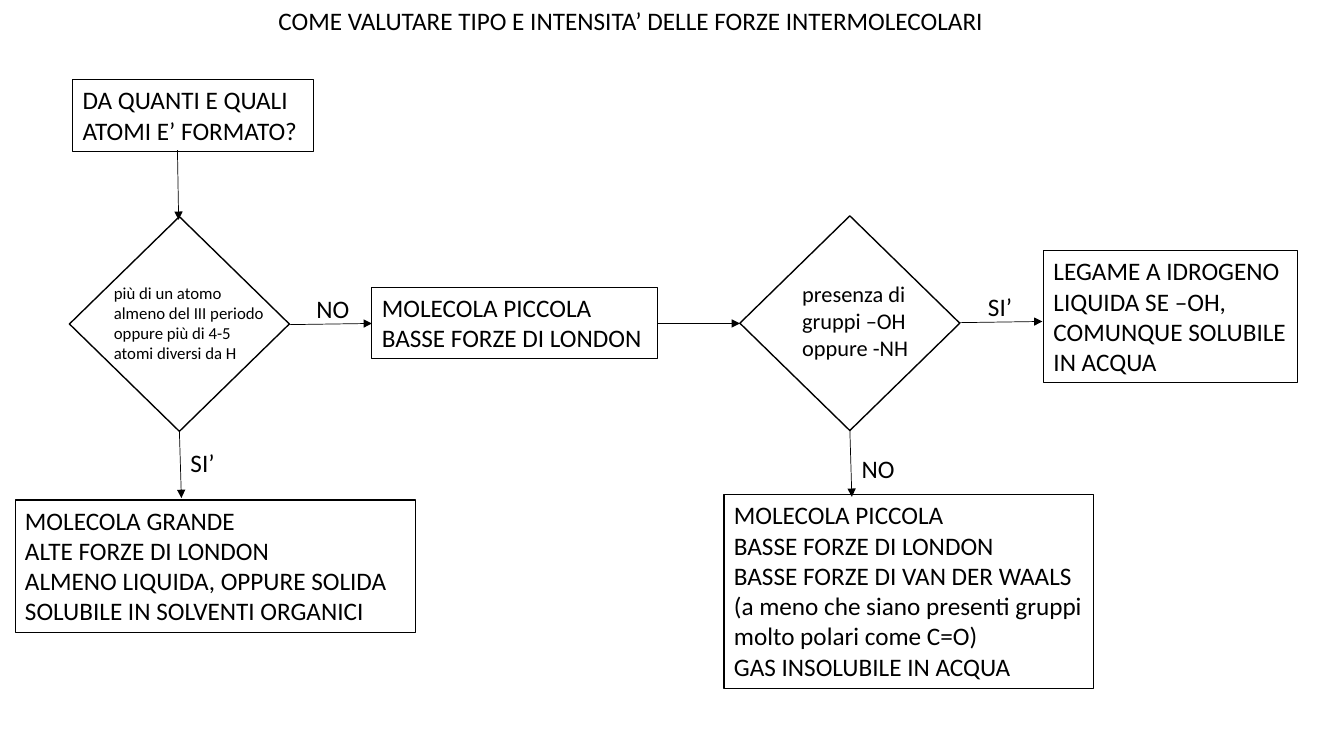
from lxml import etree
from pptx import Presentation
from pptx.dml.color import RGBColor
from pptx.enum.shapes import MSO_CONNECTOR, MSO_SHAPE
from pptx.enum.text import MSO_ANCHOR, MSO_AUTO_SIZE, PP_ALIGN
from pptx.oxml.ns import qn
from pptx.util import Cm, Inches, Pt

COLORS = {"ink": "000000", "paper": "FFFFFF"}
DIAMOND_W, DIAMOND_H = 5.54, 5.41
LABEL_H = 1.02


def rgb(name):
    return RGBColor.from_string(COLORS[name])


class FlowSlide:
    font = "Calibri"

    def __init__(self, prs):
        self.s = prs.slides.add_slide(prs.slide_layouts[5])

    def place(self, sp, x, y, w, h):
        sp.left, sp.top, sp.width, sp.height = Cm(x), Cm(y), Cm(w), Cm(h)

    def set_text(self, sp, lines, size=18):
        tf = sp.text_frame
        tf.word_wrap = True
        tf.auto_size = MSO_AUTO_SIZE.SHAPE_TO_FIT_TEXT
        tf.vertical_anchor = MSO_ANCHOR.TOP
        tf.text = "\n".join(lines)
        for p in tf.paragraphs:
            p.alignment = PP_ALIGN.LEFT
            p.line_spacing = 1.0
            p.space_before = Pt(0)
            p.font.name = self.font
            p.font.size = Pt(size)
            p.font.color.rgb = rgb("ink")

    def outline(self, sp, width):
        sp.shadow.inherit = False
        sp.line.color.rgb = rgb("ink")
        sp.line.width = Pt(width)

    def title(self, text, x, y, w, h):
        sp = self.s.shapes.title
        self.place(sp, x, y, w, h)
        self.set_text(sp, [text])

    def text(self, lines, x, y, w, h=LABEL_H, size=18, shapes=None):
        shapes = shapes or self.s.shapes
        sp = shapes.add_textbox(Cm(x), Cm(y), Cm(w), Cm(h))
        self.set_text(sp, lines, size)

    def box(self, lines, x, y, w, h):
        sp = self.s.shapes.add_shape(MSO_SHAPE.RECTANGLE, Cm(x), Cm(y), Cm(w), Cm(h))
        sp.fill.background()
        self.outline(sp, 0.75)
        self.set_text(sp, lines)

    def decision(self, lines, x, y, text_x, text_y, size):
        shapes = self.s.shapes.add_group_shape().shapes
        sp = shapes.add_shape(MSO_SHAPE.DIAMOND, Cm(x), Cm(y), Cm(DIAMOND_W), Cm(DIAMOND_H))
        sp.fill.solid()
        sp.fill.fore_color.rgb = rgb("paper")
        self.outline(sp, 1)
        self.text(lines, text_x, text_y, 4.39, 2.31, size, shapes)

    def arrow(self, x1, y1, x2, y2):
        c = self.s.shapes.add_connector(MSO_CONNECTOR.STRAIGHT, Cm(x1), Cm(y1), Cm(x2), Cm(y2))
        c.line.color.rgb = rgb("ink")
        c.line.width = Pt(0.5)
        spPr = c._element.spPr
        etree.SubElement(spPr.find(qn("a:ln")), qn("a:tailEnd"), type="triangle")
        etree.SubElement(spPr, qn("a:effectLst"))


def main():
    prs = Presentation()
    prs.slide_width, prs.slide_height = Inches(13.33), Inches(7.5)
    flow = FlowSlide(prs)

    flow.title("COME VALUTARE TIPO E INTENSITA’ DELLE FORZE INTERMOLECOLARI", 6.76, 0, 18.42, LABEL_H)

    flow.box(["DA QUANTI E QUALI ATOMI E’ FORMATO?"], 1.83, 2.01, 6.07, 1.8)
    flow.decision(
        ["più di un atomo almeno del III periodo", "oppure più di 4-5 atomi diversi da H"],
        1.75, 5.46, 2.62, 6.99, 12)
    flow.box(
        ["MOLECOLA GRANDE", "ALTE FORZE DI LONDON",
         "ALMENO LIQUIDA, OPPURE SOLIDA", "SOLUBILE IN SOLVENTI ORGANICI"],
        0.38, 12.6, 10.08, 3.33)

    flow.box(["MOLECOLA PICCOLA", "BASSE FORZE DI LONDON"], 9.37, 7.24, 7.19, 1.8)
    flow.decision(["presenza di gruppi –OH oppure -NH"], 18.64, 5.44, 19.96, 6.93, 16)
    flow.box(
        ["LEGAME A IDROGENO", "LIQUIDA SE –OH, COMUNQUE SOLUBILE IN ACQUA"],
        26.29, 6.32, 6.4, 3.33)
    flow.box(
        ["MOLECOLA PICCOLA", "BASSE FORZE DI LONDON",
         "BASSE FORZE DI VAN DER WAALS (a meno che siano presenti gruppi molto polari come C=O)",
         "GAS INSOLUBILE IN ACQUA"],
        18.24, 12.47, 9.3, 4.88)

    for ends in [
        (4.47, 3.78, 4.5, 5.54),
        (4.52, 10.87, 4.57, 12.55),
        (7.29, 8.18, 9.37, 8.15),
        (16.56, 8.15, 18.64, 8.15),
        (21.41, 10.85, 21.46, 12.52),
        (24.18, 8.13, 26.26, 8.1),
    ]:
        flow.arrow(*ends)

    for answer, x, y, w in [
        ("SI’", 4.55, 11.15, 1.24),
        ("NO", 7.72, 7.26, 1.57),
        ("SI’", 24.64, 7.21, 1.24),
        ("NO", 21.46, 11.3, 1.57),
    ]:
        flow.text([answer], x, y, w)

    prs.save("out.pptx")


if __name__ == "__main__":
    main()
